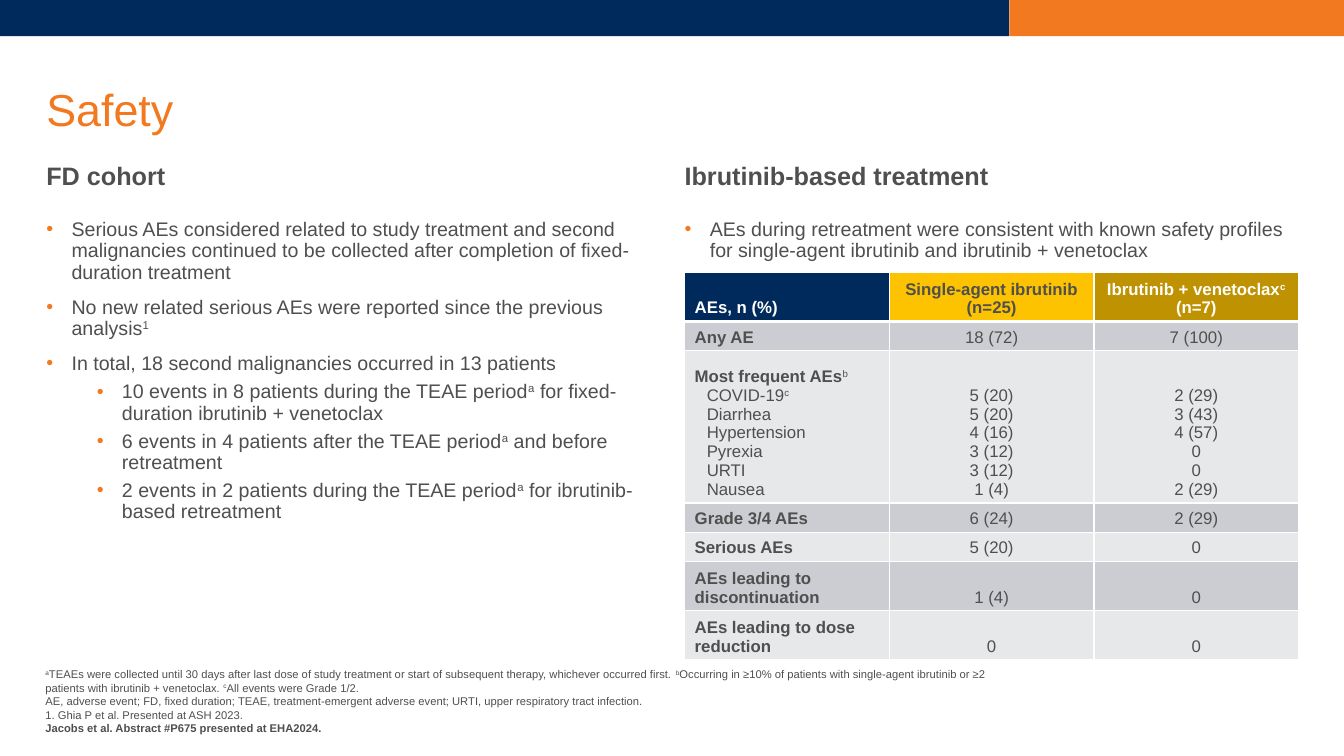
"""Build the Safety slide: cohort findings, adverse event table and footnotes."""
from dataclasses import dataclass

from lxml import etree
from pptx import Presentation
from pptx.dml.color import RGBColor
from pptx.enum.shapes import MSO_SHAPE
from pptx.enum.text import MSO_ANCHOR, PP_ALIGN
from pptx.oxml.ns import qn
from pptx.util import Inches, Pt

TITLE = "Safety"
COLUMNS = [
    ("FD cohort", [
        (0, "Serious AEs considered related to study treatment and second malignancies "
            "continued to be collected after completion of fixed-duration treatment"),
        (0, "No new related serious AEs were reported since the previous analysis^1^"),
        (0, "In total, 18 second malignancies occurred in 13 patients"),
        (1, "10 events in 8 patients during the TEAE period^a^ for fixed-duration "
            "ibrutinib + venetoclax"),
        (1, "6 events in 4 patients after the TEAE period^a^ and before retreatment"),
        (1, "2 events in 2 patients during the TEAE period^a^ for ibrutinib-based retreatment"),
    ]),
    ("Ibrutinib-based treatment", [
        (0, "AEs during retreatment were consistent with known safety profiles for "
            "single-agent ibrutinib and ibrutinib + venetoclax"),
    ]),
]
EVENT_HEADER = ["AEs, n (%)", "Single-agent ibrutinib (n=25)", "Ibrutinib + venetoclax^c^ (n=7)"]
EVENT_ROWS = [
    (0.29, ["Any AE"], ["18 (72)"], ["7 (100)"]),
    (1.51,
     ["Most frequent AEs^b^", "COVID-19^c^", "Diarrhea", "Hypertension", "Pyrexia", "URTI", "Nausea"],
     ["5 (20)", "5 (20)", "4 (16)", "3 (12)", "3 (12)", "1 (4)"],
     ["2 (29)", "3 (43)", "4 (57)", "0", "0", "2 (29)"]),
    (0.29, ["Grade 3/4 AEs"], ["6 (24)"], ["2 (29)"]),
    (0.29, ["Serious AEs"], ["5 (20)"], ["0"]),
    (0.49, ["AEs leading to discontinuation"], ["1 (4)"], ["0"]),
    (0.49, ["AEs leading to dose reduction"], ["0"], ["0"]),
]
FOOTNOTES = [
    "^a^TEAEs were collected until 30 days after last dose of study treatment or start of "
    "subsequent therapy, whichever occurred first. ^b^Occurring in ≥10% of patients with "
    "single-agent ibrutinib or ≥2 patients with ibrutinib + venetoclax. "
    "^c^All events were Grade 1/2.",
    "AE, adverse event; FD, fixed duration; TEAE, treatment-emergent adverse event; "
    "URTI, upper respiratory tract infection.",
    "1. Ghia P et al. Presented at ASH 2023.",
]
CITATION = "Jacobs et al. Abstract #P675 presented at EHA2024."


@dataclass(frozen=True)
class Theme:
    font: str = "Arial"
    navy: str = "002A5C"
    orange: str = "F37920"
    grey: str = "4E4F4E"
    white: str = "FFFFFF"
    header_fills: tuple = ("002A5C", "FDC300", "BE9200")
    header_inks: tuple = ("FFFFFF", "4E4F4E", "FFFFFF")
    bands: tuple = ("CCCDD2", "E7E8EA")
    title: int = 32
    heading: int = 18
    body: int = 14
    cell: int = 12
    note: int = 8


THEME = Theme()
SLIDE_WIDTH, SLIDE_HEIGHT = 13.33, 7.5
BAND_SPLIT, BAND_HEIGHT = 10.01, 0.36
COLUMN_LEFTS, COLUMN_WIDTH = (0.46, 6.79), 6.09
HEADER_HEIGHT = 0.49


def add_runs(paragraph, text, size, color, bold=False, bold_marks=False):
    for index, piece in enumerate(text.split("^")):
        if not piece:
            continue
        raised = index % 2 == 1
        run = paragraph.add_run()
        run.text = piece
        run.font.name = THEME.font
        run.font.size = Pt(size)
        run.font.bold = bold and (bold_marks or not raised)
        run.font.color.rgb = RGBColor.from_string(color)
        if raised:
            run.font._element.set("baseline", "30000")


def next_paragraph(frame, index):
    return frame.add_paragraph() if index else frame.paragraphs[0]


def add_frame(slide, left, top, width, height, anchor):
    frame = slide.shapes.add_textbox(*map(Inches, (left, top, width, height))).text_frame
    frame.word_wrap = True
    frame.margin_left = frame.margin_right = frame.margin_top = frame.margin_bottom = 0
    frame.vertical_anchor = anchor
    return frame


def add_heading(slide, text, box, anchor, size, color, bold):
    paragraph = add_frame(slide, *box, anchor).paragraphs[0]
    paragraph.line_spacing = 0.9
    add_runs(paragraph, text, size, color, bold)


def add_bullets(slide, bullets, left):
    frame = add_frame(slide, left, 2.18, COLUMN_WIDTH, 4.45, MSO_ANCHOR.TOP)
    for index, (level, text) in enumerate(bullets):
        paragraph = next_paragraph(frame, index)
        paragraph.level = level
        paragraph.line_spacing = 0.9
        paragraph.space_before = Pt((5 if level else 10) if index else 0)
        properties = paragraph._p.get_or_add_pPr()
        properties.set("marL", str(Inches(0.25 + 0.5 * level)))
        properties.set("indent", str(Inches(-0.25)))
        bullet_color = etree.SubElement(properties, qn("a:buClr"))
        etree.SubElement(bullet_color, qn("a:srgbClr"), val=THEME.orange)
        etree.SubElement(properties, qn("a:buFont"), typeface=THEME.font)
        etree.SubElement(properties, qn("a:buChar"), char="•")
        add_runs(paragraph, text, THEME.body, THEME.grey)


def style_cell(cell, fill, top, bottom):
    cell.vertical_anchor = MSO_ANCHOR.BOTTOM
    cell.margin_left = cell.margin_right = Inches(0.1)
    cell.margin_top = cell.margin_bottom = Inches(0.04)
    cell.fill.solid()
    cell.fill.fore_color.rgb = RGBColor.from_string(fill)
    sides = (("a:lnL", 1), ("a:lnR", 1), ("a:lnT", top), ("a:lnB", bottom))
    for position, (side, width) in enumerate(sides):
        line = etree.Element(qn(side), w=str(Pt(width)))
        line_fill = etree.SubElement(line, qn("a:solidFill"))
        etree.SubElement(line_fill, qn("a:srgbClr"), val=THEME.white)
        cell._tc.get_or_add_tcPr().insert(position, line)


def add_event_table(slide):
    heights = [HEADER_HEIGHT] + [row[0] for row in EVENT_ROWS]
    table = slide.shapes.add_table(
        len(heights), len(EVENT_HEADER), Inches(COLUMN_LEFTS[1]), Inches(2.7),
        Inches(COLUMN_WIDTH), Inches(sum(heights))).table
    for row, height in zip(table.rows, heights):
        row.height = Inches(height)
    for column, text in enumerate(EVENT_HEADER):
        cell = table.cell(0, column)
        style_cell(cell, THEME.header_fills[column], 1, 3)
        paragraph = cell.text_frame.paragraphs[0]
        paragraph.alignment = PP_ALIGN.CENTER if column else PP_ALIGN.LEFT
        add_runs(paragraph, text, THEME.cell, THEME.header_inks[column], True, True)
    for row, (_, *entries) in enumerate(EVENT_ROWS, start=1):
        for column, lines in enumerate(entries):
            cell = table.cell(row, column)
            style_cell(cell, THEME.bands[(row - 1) % 2], 3 if row == 1 else 1, 1)
            for index, text in enumerate(lines):
                paragraph = next_paragraph(cell.text_frame, index)
                paragraph.alignment = PP_ALIGN.CENTER if column else PP_ALIGN.LEFT
                if index and not column:
                    paragraph._p.get_or_add_pPr().set("marL", str(Inches(0.12)))
                add_runs(paragraph, text, THEME.cell, THEME.grey, not column and not index)


def add_band(slide, left, width, color):
    band = slide.shapes.add_shape(
        MSO_SHAPE.RECTANGLE, Inches(left), 0, Inches(width), Inches(BAND_HEIGHT))
    band.shadow.inherit = False
    band.fill.solid()
    band.fill.fore_color.rgb = RGBColor.from_string(color)
    band.line.fill.background()


def main():
    deck = Presentation()
    deck.slide_width, deck.slide_height = Inches(SLIDE_WIDTH), Inches(SLIDE_HEIGHT)
    slide = deck.slides.add_slide(deck.slide_layouts[6])
    add_band(slide, 0, BAND_SPLIT, THEME.navy)
    add_band(slide, BAND_SPLIT, SLIDE_WIDTH - BAND_SPLIT, THEME.orange)
    add_heading(slide, TITLE, (COLUMN_LEFTS[0], 0.63, 12.43, 0.72), MSO_ANCHOR.BOTTOM,
                THEME.title, THEME.orange, False)
    for left, (heading, bullets) in zip(COLUMN_LEFTS, COLUMNS):
        add_heading(slide, heading, (left, 1.4, COLUMN_WIDTH, 0.71), MSO_ANCHOR.MIDDLE,
                    THEME.heading, THEME.grey, True)
        add_bullets(slide, bullets, left)
    add_event_table(slide)
    footer = add_frame(slide, 0.45, 6.42, 9.33, 0.87, MSO_ANCHOR.BOTTOM)
    for index, text in enumerate(FOOTNOTES + [CITATION]):
        add_runs(next_paragraph(footer, index), text, THEME.note, THEME.grey, text == CITATION)
    deck.save("out.pptx")


if __name__ == "__main__":
    main()
